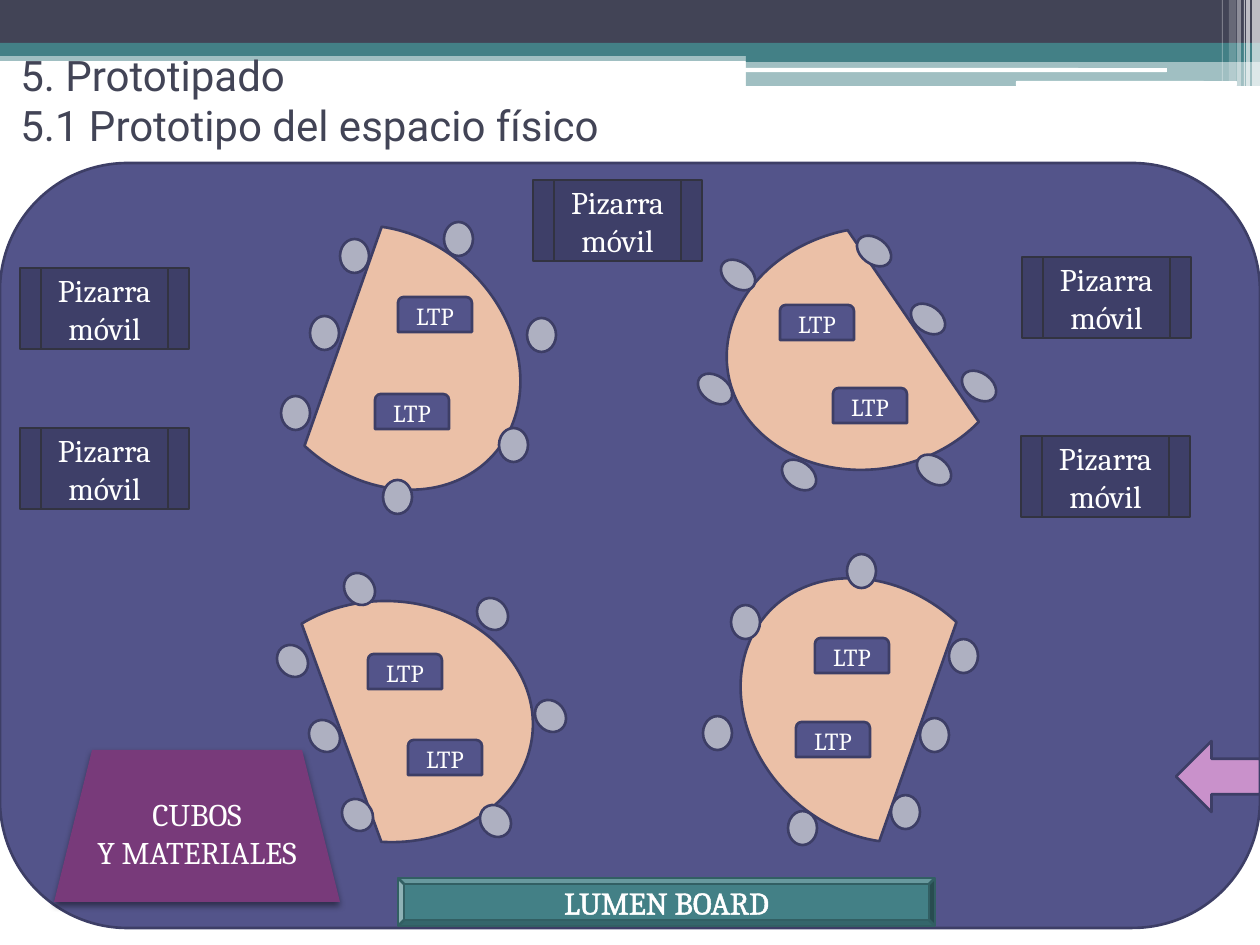
from lxml import etree
from pptx import Presentation
from pptx.dml.color import RGBColor
from pptx.enum.shapes import MSO_SHAPE
from pptx.enum.text import MSO_ANCHOR, PP_ALIGN
from pptx.oxml.ns import qn
from pptx.util import Emu, Pt

PX = 914400 / 126
WIDTH, HEIGHT = 1260, 945
RECT, ROUNDED = MSO_SHAPE.RECTANGLE, MSO_SHAPE.ROUNDED_RECTANGLE
CHORD, OVAL = MSO_SHAPE.CHORD, MSO_SHAPE.OVAL
LAPTOP, WHITEBOARD = MSO_SHAPE.ROUND_2_SAME_RECTANGLE, MSO_SHAPE.FLOWCHART_PREDEFINED_PROCESS
BEVEL, TRAPEZOID, ARROW = MSO_SHAPE.BEVEL, MSO_SHAPE.TRAPEZOID, MSO_SHAPE.LEFT_ARROW
CENTER, LEFT = PP_ALIGN.CENTER, PP_ALIGN.LEFT

COLORS = {
    "white": "FFFFFF", "slate": "424456", "teal": "438086", "dark teal": "325F63",
    "room": "53548A", "outline": "3D3E66", "table": "EBC0A7", "chair": "AEB0C1",
    "board": "3E3F68", "board edge": "323341", "materials": "783A7A",
    "entrance": "C991CB", "black": "000000",
}

TITLE = "5. Prototipado\v5.1 Prototipo del espacio físico"

# shape, (left, top, width, height), colour, opacity in percent
HEADER = [
    (RECT, (0, 50, 1260, 11), "teal", 50),
    (RECT, (0, 0, 1260, 43), "slate", 100),
    (RECT, (0, 43, 1260, 13), "teal", 100),
    (RECT, (746, 49, 514, 13), "teal", 100),
    (RECT, (746, 60, 514, 26), "teal", 50),
    (ROUNDED, (745, 68, 422, 4), "white", 100),
    (ROUNDED, (1016, 81, 221, 5), "white", 100),
    (RECT, (1252, 0, 8, 86), "white", 65),
    (RECT, (1246, 0, 4, 86), "white", 65),
    (RECT, (1244, 0, 1, 86), "white", 60),
    (RECT, (1237, 0, 4, 86), "white", 40),
    (RECT, (1229, 0, 7, 81), "white", 20),
    (RECT, (1222, 0, 1, 81), "white", 30),
]

TABLE_SIZE = (289, 241)
LAPTOP_SIZE = (74, 35)
BOARD_SIZE = (169, 81)

WORK_TABLES = [
    {"at": (242, 237), "turn": 222.9, "chair_size": (29, 34), "chair_turn": 0,
     "chairs": [(281, 396), (310, 316), (340, 239), (444, 222), (527, 318), (499, 428), (383, 480)]},
    {"at": (244, 601), "turn": 183.4, "chair_size": (29, 34), "chair_turn": 320.5,
     "chairs": [(343, 798), (310, 719), (278, 644), (345, 572), (478, 597), (536, 699), (481, 804)]},
    {"at": (726, 228), "turn": 349.1, "chair_size": (26, 38), "chair_turn": 126.2,
     "chairs": [(861, 232), (915, 300), (966, 367), (921, 451), (786, 456), (702, 370), (725, 256)]},
    {"at": (730, 590), "turn": 42.9, "chair_size": (29, 34), "chair_turn": 180,
     "chairs": [(949, 639), (920, 718), (891, 795), (788, 811), (703, 716), (731, 605), (847, 554)]},
]
LAPTOPS = [(398, 297), (375, 394), (368, 654), (408, 740),
           (780, 305), (833, 388), (815, 638), (796, 722)]
BOARDS = [(20, 268), (20, 428), (533, 180), (1021, 436), (1022, 257)]


def px(value):
    return Emu(round(value * PX))


def rgb(name):
    return RGBColor.from_string(COLORS[name])


def add_color(parent, name, opacity):
    color = etree.SubElement(parent, qn("a:srgbClr"), val=COLORS[name])
    etree.SubElement(color, qn("a:alpha"), val=str(opacity * 1000))


def add_shape(page, kind, box, fill, line=None, turn=0, opacity=100):
    shape = page.shapes.add_shape(kind, *map(px, box))
    shape.shadow.inherit = False
    shape.rotation = turn
    shape.fill.solid()
    shape.fill.fore_color.rgb = rgb(fill)
    if opacity < 100:
        solid = shape.fill._xPr.find(qn("a:solidFill"))
        solid.remove(solid[0])
        add_color(solid, fill, opacity)
    if line:
        shape.line.color.rgb = rgb(line)
        shape.line.width = Pt(1.5)
    else:
        shape.line.fill.background()
    return shape


def write(shape, text, size=18, font="Cambria", color="white", align=CENTER):
    frame = shape.text_frame
    frame.word_wrap = True
    frame.vertical_anchor = MSO_ANCHOR.MIDDLE
    frame.text = text
    for para in frame.paragraphs:
        para.alignment = align
        for span in para.runs:
            span.font.size = Pt(size)
            span.font.name = font
            span.font.color.rgb = rgb(color)


def outline_text(shape, color, width):
    for span in shape.text_frame.paragraphs[0].runs:
        line = etree.Element(qn("a:ln"), w=str(Pt(width)))
        add_color(etree.SubElement(line, qn("a:solidFill")), color, 100)
        span.font._element.insert(0, line)


def drop_shadow(shape, color, opacity, blur, distance):
    effects = shape._element.spPr.find(qn("a:effectLst"))
    shadow = etree.SubElement(effects, qn("a:outerShdw"), blurRad=str(Pt(blur)),
                              dist=str(Pt(distance)), dir="5400000")
    add_color(shadow, color, opacity)


def main():
    deck = Presentation()
    deck.slide_width, deck.slide_height = px(WIDTH), px(HEIGHT)
    page = deck.slides.add_slide(deck.slide_layouts[6])

    for kind, box, fill, opacity in HEADER:
        add_shape(page, kind, box, fill, opacity=opacity)
    title = page.shapes.add_textbox(*map(px, (8, 26, 1134, 147)))
    write(title, TITLE, size=24, font="Roboto", color="slate", align=LEFT)

    add_shape(page, ROUNDED, (0, 163, 1260, 765), "room", "outline")
    for table in WORK_TABLES:
        add_shape(page, CHORD, table["at"] + TABLE_SIZE, "table", "outline", table["turn"])
        for chair in table["chairs"]:
            add_shape(page, OVAL, chair + table["chair_size"], "chair", "outline",
                      table["chair_turn"])

    main_board = add_shape(page, BEVEL, (398, 878, 537, 48), "teal", "dark teal")
    write(main_board, "LUMEN BOARD")
    outline_text(main_board, "white", 1.45)
    materials = add_shape(page, TRAPEZOID, (54, 750, 286, 152), "materials")
    write(materials, "CUBOS\nY MATERIALES")
    drop_shadow(materials, "black", 45, blur=4, distance=2)

    for spot in LAPTOPS:
        write(add_shape(page, LAPTOP, spot + LAPTOP_SIZE, "room", "outline"), "LTP", size=14)
    for spot in BOARDS:
        write(add_shape(page, WHITEBOARD, spot + BOARD_SIZE, "board", "board edge"),
              "Pizarra móvil")
    add_shape(page, ARROW, (1176, 741, 84, 71), "entrance", "outline")

    deck.save("out.pptx")


if __name__ == "__main__":
    main()
